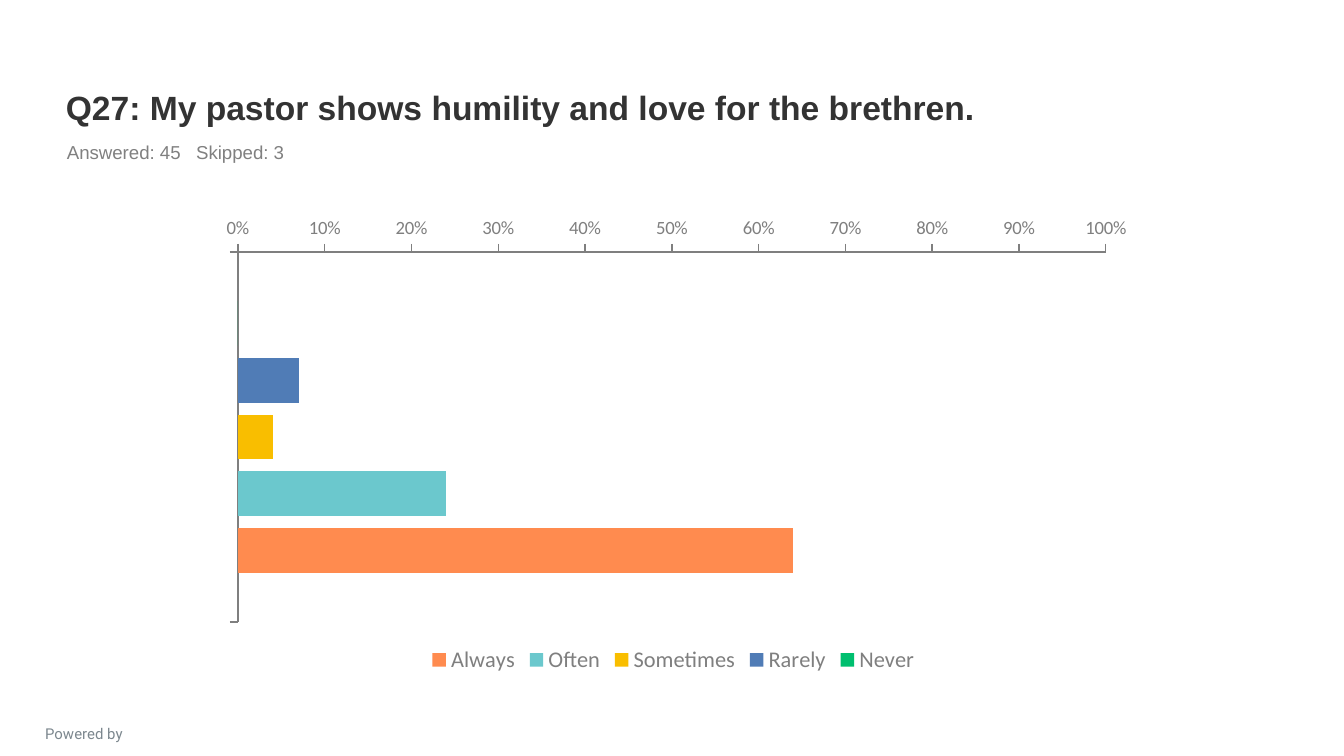
from dataclasses import dataclass

from pptx import Presentation
from pptx.chart.data import CategoryChartData
from pptx.dml.color import RGBColor
from pptx.enum.chart import XL_CHART_TYPE as ChartType
from pptx.enum.chart import XL_LEGEND_POSITION as LegendPosition
from pptx.enum.chart import XL_TICK_LABEL_POSITION as LabelPosition
from pptx.enum.chart import XL_TICK_MARK as TickMark
from pptx.enum.text import MSO_ANCHOR as Anchor
from pptx.enum.text import PP_ALIGN as Align
from pptx.util import Inches, Pt

SLIDE_WIDTH = Inches(10)
SLIDE_HEIGHT = SLIDE_WIDTH * 9 // 16
COLUMNS, ROWS = 100, 56.25


@dataclass(frozen=True)
class TextStyle:
    name: str
    size: float
    color: str
    bold: bool = False


@dataclass(frozen=True)
class Theme:
    title: TextStyle = TextStyle("Arial", 18, "333333", True)
    response_count: TextStyle = TextStyle("Arial", 10, "808080")
    footer: TextStyle = TextStyle("Roboto", 8, "7C878E")
    chart: TextStyle = TextStyle("Calibri", 18, "333333")
    axis: TextStyle = TextStyle("Calibri", 10, "7F7F7F")
    legend: TextStyle = TextStyle("Calibri", 12, "7F7F7F")
    axis_line: float = 0.75


@dataclass(frozen=True)
class Area:
    column: float
    row: float
    columns: float
    rows: float

    def bounds(self) -> tuple[int, int, int, int]:
        return (
            int(SLIDE_WIDTH * self.column / COLUMNS),
            int(SLIDE_HEIGHT * self.row / ROWS),
            int(SLIDE_WIDTH * self.columns / COLUMNS),
            int(SLIDE_HEIGHT * self.rows / ROWS),
        )


@dataclass(frozen=True)
class Answer:
    name: str
    share: float
    color: str


THEME = Theme()
ANSWERS = (
    Answer("Never", 0, "00BF6F"),
    Answer("Rarely", 0.07, "507CB6"),
    Answer("Sometimes", 0.04, "F9BE00"),
    Answer("Often", 0.24, "6BC8CD"),
    Answer("Always", 0.64, "FF8B4F"),
)


def apply_format(target, values: dict) -> None:
    for name, value in values.items():
        setattr(target, name, value)


def style_font(font, style: TextStyle) -> None:
    apply_format(font, {"name": style.name, "size": Pt(style.size), "bold": style.bold})
    font.color.rgb = RGBColor.from_string(style.color)


def write_text(shape, text: str, style: TextStyle, alignment: Align, anchor: Anchor) -> None:
    apply_format(shape.text_frame, {"text": text, "word_wrap": True, "vertical_anchor": anchor})
    paragraph = shape.text_frame.paragraphs[0]
    apply_format(paragraph, {"alignment": alignment, "space_before": Pt(0)})
    style_font(paragraph.runs[0].font, style)


def add_label(slide, area: Area, text: str, style: TextStyle, alignment: Align) -> None:
    shape = slide.shapes.add_textbox(*area.bounds())
    write_text(shape, text, style, alignment, Anchor.TOP)


def style_axis(axis, values: dict) -> None:
    common = {
        "has_major_gridlines": False,
        "major_tick_mark": TickMark.OUTSIDE,
        "minor_tick_mark": TickMark.NONE,
    }
    apply_format(axis, common | values)
    style_font(axis.tick_labels.font, THEME.axis)
    axis.format.line.width = Pt(THEME.axis_line)
    axis.format.line.color.rgb = RGBColor.from_string(THEME.axis.color)


def add_answer_chart(slide, area: Area) -> None:
    data = CategoryChartData(number_format="0%")
    data.categories = [" "]
    for answer in ANSWERS:
        data.add_series(answer.name, [answer.share])
    chart = slide.shapes.add_chart(ChartType.BAR_CLUSTERED, *area.bounds(), data).chart
    apply_format(chart, {"has_title": False, "has_legend": True})
    style_font(chart.font, THEME.chart)
    apply_format(chart.legend, {"position": LegendPosition.BOTTOM, "include_in_layout": False})
    style_font(chart.legend.font, THEME.legend)
    style_axis(chart.category_axis, {
        "reverse_order": True,
        "crosses_at": 2,
        "tick_label_position": LabelPosition.LOW,
    })
    style_axis(chart.value_axis, {"minimum_scale": 0, "maximum_scale": 1, "major_unit": 0.1})
    apply_format(chart.value_axis.tick_labels, {
        "number_format": "0%", "number_format_is_linked": False,
    })
    plot = chart.plots[0]
    apply_format(plot, {"gap_width": 219, "overlap": -27, "vary_by_categories": False})
    for series, answer in zip(plot.series, ANSWERS):
        series.format.fill.solid()
        series.format.fill.fore_color.rgb = RGBColor.from_string(answer.color)


def main() -> None:
    presentation = Presentation()
    apply_format(presentation, {"slide_width": SLIDE_WIDTH, "slide_height": SLIDE_HEIGHT})
    slide = presentation.slides.add_slide(presentation.slide_layouts.get_by_name("Title Only"))
    title = slide.shapes.title
    left, top, width, height = Area(3.9, 4, 90, 6).bounds()
    apply_format(title, {"left": left, "top": top, "width": width, "height": height})
    write_text(title, "Q27: My pastor shows humility and love for the brethren.",
               THEME.title, Align.LEFT, Anchor.BOTTOM)
    add_label(slide, Area(4, 10, 90, 2.6), "Answered: 45   Skipped: 3",
              THEME.response_count, Align.LEFT)
    add_answer_chart(slide, Area(15, 15.5, 70.2, 35))
    add_label(slide, Area(0.5, 53.4, 11.5, 1.8), "Powered by", THEME.footer, Align.CENTER)
    presentation.save("out.pptx")


if __name__ == "__main__":
    main()
